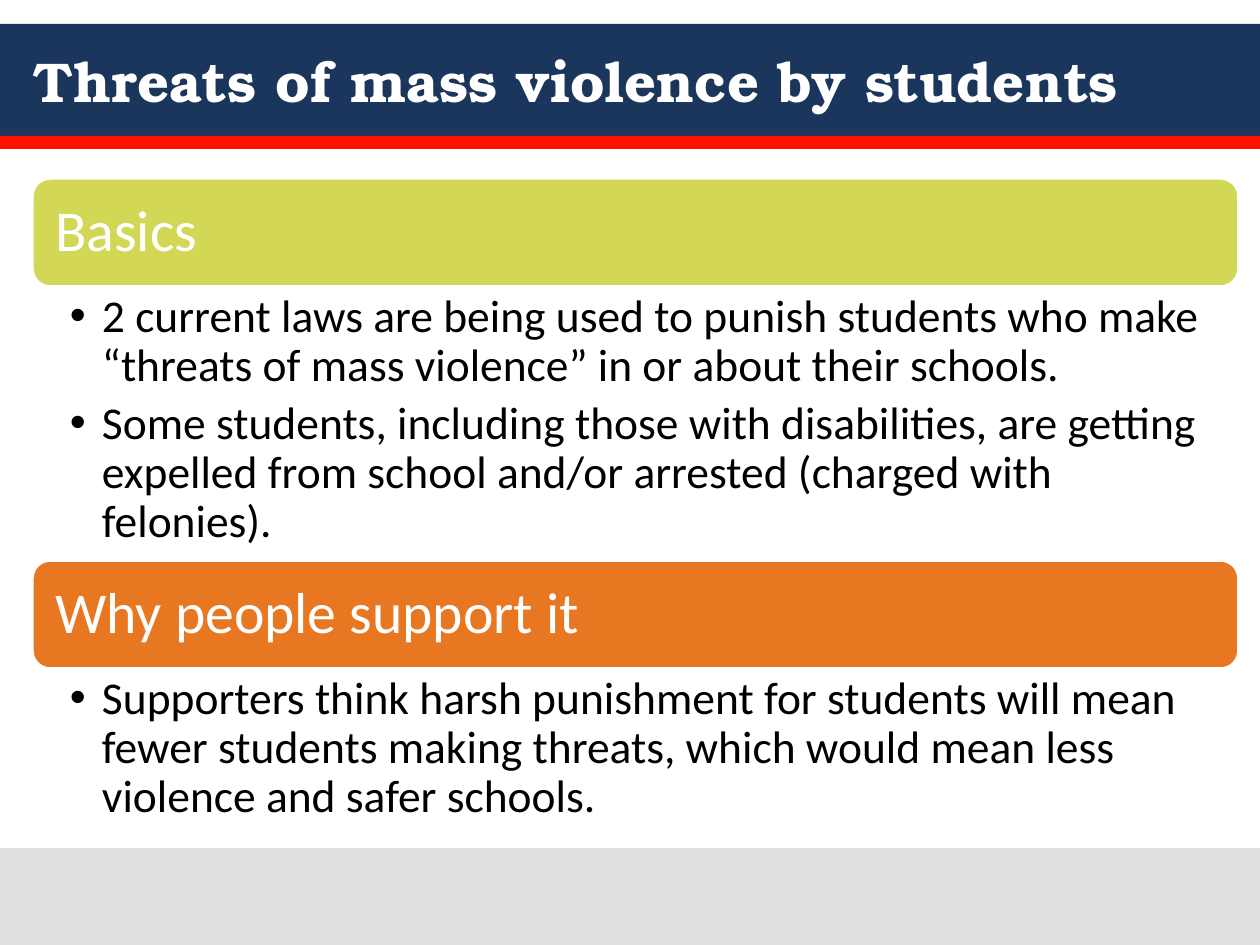
"""Build the slide on threats of mass violence by students."""
from lxml import etree
from pptx import Presentation, util as u
from pptx.dml.color import RGBColor
from pptx.enum import shapes, text
from pptx.oxml.ns import qn

TITLE = "Threats of mass violence by students"
BANDS = [(24, 112, "1B365D"), (136, 13, "FF0F00"), (848, 97, "E0E0E0")]
SECTIONS = [
    ("Basics", "D2D755", 178, 273, [
        "2 current laws are being used to punish students who make “threats of mass violence” in or about their schools.",
        "Some students, including those with disabilities, are getting expelled from school and/or arrested (charged with felonies).",
    ]),
    ("Why people support it", "E87722", 560, 165, [
        "Supporters think harsh punishment for students will mean fewer students making threats, which would mean less violence and safer schools.",
    ]),
]
WIDTH, HEIGHT = 1260, 945
LEFT, SECTION_WIDTH, HEADING_HEIGHT = 32, 1207, 109
HANGING = 32


def px(length):
    return u.Emu(length * 914400 // 126)


def colour(value):
    return RGBColor.from_string(value)


def apply(target, values):
    for name, value in values.items():
        setattr(target, name, value)


def place(shape, *box):
    apply(shape, dict(zip(("left", "top", "width", "height"), map(px, box))))


def add_block(slide, preset, box, fill):
    block = slide.shapes.add_shape(preset, *map(px, box))
    block.shadow.inherit = False
    block.fill.solid()
    block.fill.fore_color.rgb = colour(fill)
    block.line.fill.background()
    return block


def fill_frame(shape, lines, anchor, insets, size, ink, font="Calibri", bold=False,
               bullet=False, spacing=0.9):
    frame = shape.text_frame
    frame.text = "\n".join(lines)
    sides = ("margin_left", "margin_top", "margin_right", "margin_bottom")
    apply(frame, dict(zip(sides, map(px, insets))))
    apply(frame, {"word_wrap": True, "vertical_anchor": anchor,
                  "auto_size": text.MSO_AUTO_SIZE.NONE})
    for para in frame.paragraphs:
        if bullet:
            para.level = 1
            properties = para._p.get_or_add_pPr()
            properties.set("marL", str(px(HANGING)))
            properties.set("indent", str(-px(HANGING)))
            etree.SubElement(properties, qn("a:buChar")).set("char", "•")
        apply(para, {"alignment": text.PP_ALIGN.LEFT, "line_spacing": spacing,
                     "space_before": u.Pt(0),
                     "space_after": u.Pt(size * 0.2 if bullet else 0)})
        apply(para.font, {"name": font, "size": u.Pt(size), "bold": bold})
        para.font.color.rgb = colour(ink)


def main():
    deck = Presentation()
    deck.slide_width, deck.slide_height = px(WIDTH), px(HEIGHT)
    page = deck.slides.add_slide(deck.slide_layouts.get_by_name("Two Content"))
    preset = shapes.MSO_SHAPE
    anchor = text.MSO_ANCHOR

    for top, height, fill in BANDS:
        add_block(page, preset.RECTANGLE, (0, top, WIDTH, height), fill)

    title = page.shapes.title
    place(title, 21, 24, 1218, 113)
    fill_frame(title, [TITLE], anchor.MIDDLE, (13, 6, 13, 6), 32, "FFFFFF",
               "TeX Gyre Bonum", bold=True, spacing=1.0)
    page.shapes._spTree.append(title._element)

    for number, (name, fill, top, height, points) in enumerate(SECTIONS, 1):
        heading = add_block(page, preset.ROUNDED_RECTANGLE,
                            (LEFT, top, SECTION_WIDTH, HEADING_HEIGHT), fill)
        heading.line.color.rgb = colour("FFFFFF")
        heading.line.width = u.Pt(2)
        fill_frame(heading, [name], anchor.MIDDLE, (18, 18, 18, 18), 33, "FFFFFF")
        body = page.placeholders[number]
        place(body, LEFT, top + HEADING_HEIGHT, SECTION_WIDTH, height)
        fill_frame(body, points, anchor.TOP, (38, 6, 33, 6), 26, "000000", bullet=True)

    deck.save("out.pptx")


if __name__ == "__main__":
    main()
